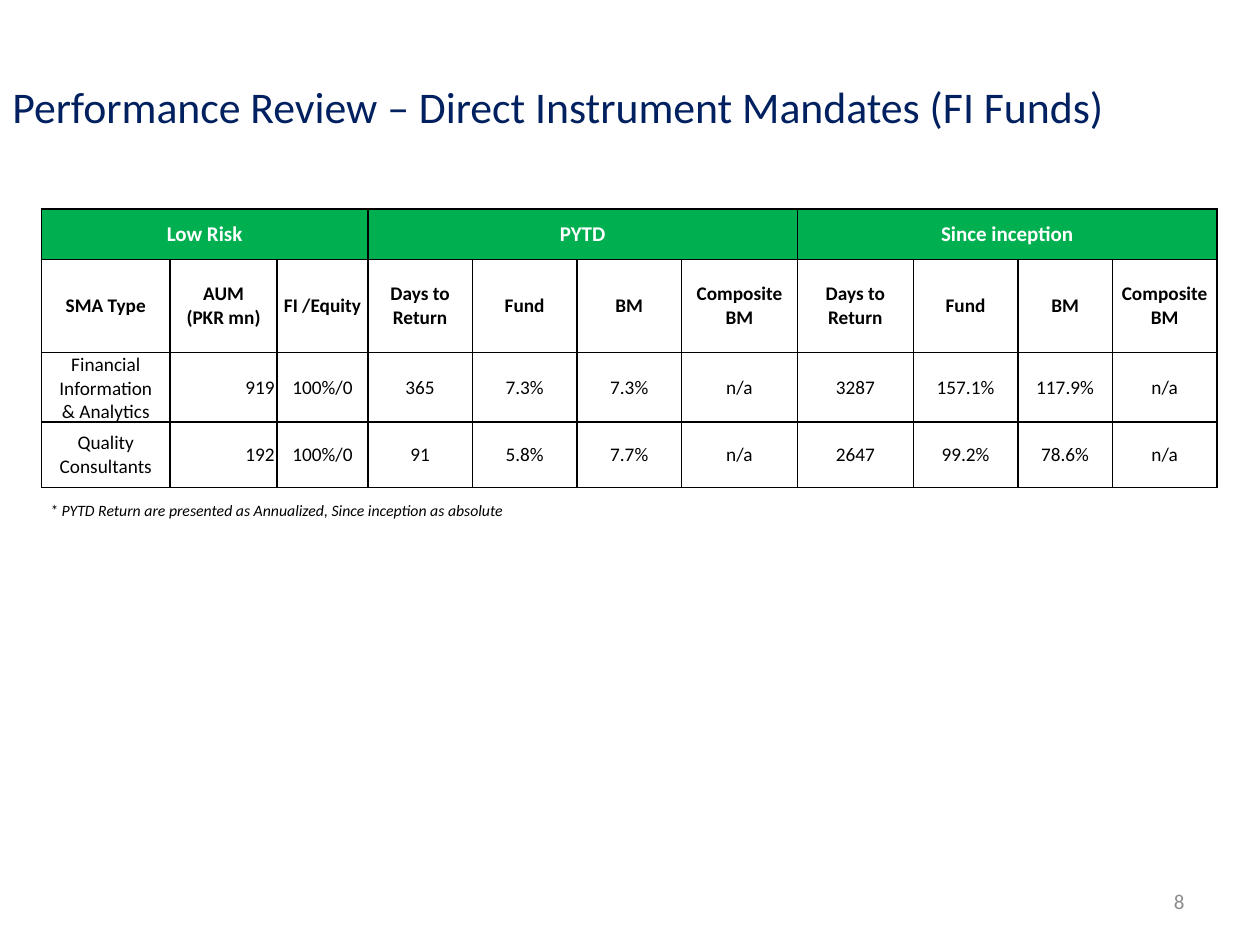
from lxml import etree
from pptx import Presentation
from pptx import util as u
from pptx.dml.color import RGBColor
from pptx.enum import text
from pptx.oxml.ns import qn

INK = {"navy": "002060", "green": "00B050", "white": "FFFFFF",
       "black": "000000", "gray": "8C8C8C"}
LEFT, MID, RIGHT = (text.PP_ALIGN.LEFT, text.PP_ALIGN.CENTER,
                    text.PP_ALIGN.RIGHT)

deck = Presentation()
deck.slide_width, deck.slide_height = u.Inches(10), u.Inches(7.5)
wide, high = deck.slide_width, deck.slide_height
slide = deck.slides.add_slide(deck.slide_layouts[6])


def write(frame, words, ink, align, **form):
    """Fill a text frame, one paragraph a line, in one format."""
    frame.text = words
    for para in frame.paragraphs:
        para.alignment = align
        for run in para.runs:
            run.font.name = "Calibri"
            run.font.color.rgb = RGBColor.from_string(INK[ink])
            for key, value in form.items():
                setattr(run.font, key, value)


def edge(cell):
    """Draw a thin black line on all four sides of a cell."""
    props = cell._tc.get_or_add_tcPr()
    for side in ("lnL", "lnR", "lnT", "lnB"):
        line = etree.SubElement(props, qn(f"a:{side}"), w=str(u.Pt(1)))
        fill = etree.SubElement(line, qn("a:solidFill"))
        etree.SubElement(fill, qn("a:srgbClr"), val=INK["black"])


# Title, footnote and page number: left, top, width, height as shares
top, mid = text.MSO_ANCHOR.TOP, text.MSO_ANCHOR.MIDDLE
notes = [
    ("Performance Review – Direct Instrument Mandates (FI Funds)",
     (0, 0.072, 1, 0.08), mid, "navy", LEFT, {"size": u.Pt(25)}),
    ("* PYTD Return are presented as Annualized, Since inception as absolute",
     (0.03, 0.523, 0.504, 0.033), top, "black", LEFT,
     {"size": u.Pt(9), "italic": True}),
    ("8", (0.717, 0.927, 0.233, 0.053), mid, "gray", RIGHT,
     {"size": u.Pt(12)}),
]
for words, (x, y, w, h), anchor, ink, align, form in notes:
    box = slide.shapes.add_textbox(int(x * wide), int(y * high),
                                   int(w * wide), int(h * high))
    box.text_frame.word_wrap = True
    box.text_frame.vertical_anchor = anchor
    write(box.text_frame, words, ink, align, **form)

# Performance table
cols = [1.02, 0.85, 0.72, 0.83, 0.83, 0.83, 0.92, 0.92, 0.83, 0.75, 0.83]
rows = [0.4, 0.74, 0.52, 0.52]
groups = {0: ("Low Risk", 2), 3: ("PYTD", 6), 7: ("Since inception", 10)}
data = [
    [groups[c][0] if c in groups else "" for c in range(len(cols))],
    ["SMA Type", "AUM\n(PKR mn)", "FI /Equity"]
    + ["Days to\nReturn", "Fund", "BM", "Composite\nBM"] * 2,
    ["Financial\nInformation\n& Analytics", "919", "100%/0", "365", "7.3%",
     "7.3%", "n/a", "3287", "157.1%", "117.9%", "n/a"],
    ["Quality\nConsultants", "192", "100%/0", "91", "5.8%",
     "7.7%", "n/a", "2647", "99.2%", "78.6%", "n/a"],
]
frame = slide.shapes.add_table(len(rows), len(cols),
                               u.Inches(0.33), u.Inches(1.66),
                               u.Inches(sum(cols)), u.Inches(sum(rows)))
table = frame.table
for col, size in zip(table.columns, cols):
    col.width = u.Inches(size)
for row, size in zip(table.rows, rows):
    row.height = u.Inches(size)

for r, line in enumerate(data):
    for c, words in enumerate(line):
        cell = table.cell(r, c)
        for side in ("left", "right", "top", "bottom"):
            setattr(cell, f"margin_{side}", 0)
        cell.vertical_anchor = mid
        edge(cell)
        cell.fill.solid()
        cell.fill.fore_color.rgb = RGBColor.from_string(
            INK["white" if r else "green"])
        amount = r > 1 and c == 1
        if amount:
            cell.margin_right = u.Inches(0.02)
        write(cell.text_frame, words, "black" if r else "white",
              RIGHT if amount else MID,
              size=u.Pt(11 if r else 12), bold=r < 2)
for first, (name, last) in groups.items():
    table.cell(0, first).merge(table.cell(0, last))

deck.save("out.pptx")
